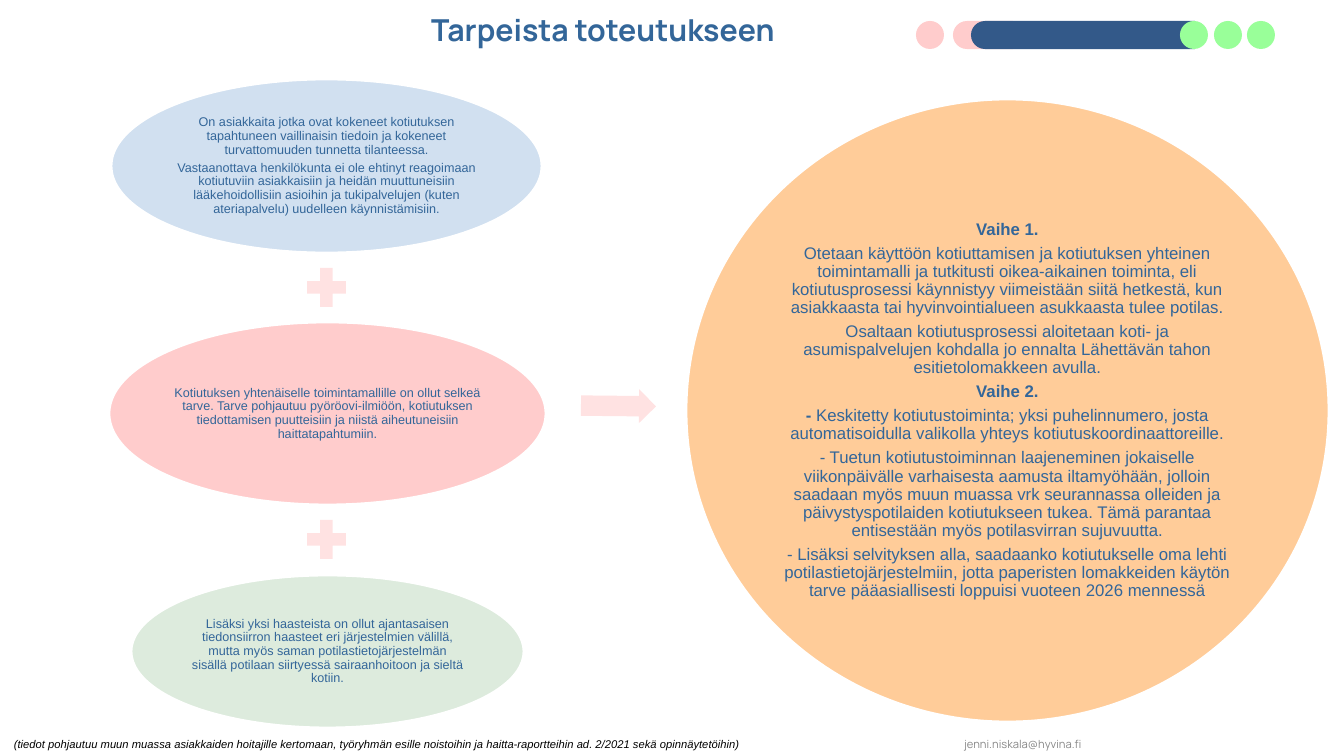
import pptx
import pptx.dml.color
import pptx.enum.shapes
import pptx.enum.text
import pptx.util

PX = 914400 / 100.8
COLORS = {
    "text": "336699", "navy": "335989", "mint": "99FF99", "rose": "FFCCCC",
    "blush": "FFE2E2", "sky": "D1E0F0", "sage": "DDEBDD", "peach": "FFCC99",
    "white": "FFFFFF", "grey": "888888", "black": "000000",
}
PRESET = pptx.enum.shapes.MSO_SHAPE
ALIGN = pptx.enum.text.PP_ALIGN
ANCHOR = pptx.enum.text.MSO_ANCHOR

presentation = pptx.Presentation()
presentation.slide_width = round(1344 * PX)
presentation.slide_height = round(756 * PX)
slide = presentation.slides.add_slide(presentation.slide_layouts[5])


def add_figure(preset, box, color):
    figure = slide.shapes.add_shape(preset, *(round(length * PX) for length in box))
    figure.shadow.inherit = False
    figure.fill.solid()
    figure.fill.fore_color.rgb = pptx.dml.color.RGBColor.from_string(COLORS[color])
    figure.line.fill.background()
    return figure


def write(frame, paragraphs, frame_format, paragraph_format, font_format, color):
    """Fill a text frame; each paragraph is a list of (text, bold) runs."""
    for name, value in frame_format.items():
        setattr(frame, name, value)
    for index, runs in enumerate(paragraphs):
        paragraph = frame.add_paragraph() if index else frame.paragraphs[0]
        for name, value in paragraph_format.items():
            setattr(paragraph, name, value)
        for text, bold in runs:
            run = paragraph.add_run()
            run.text = text
            for name, value in {**font_format, "bold": bold}.items():
                setattr(run.font, name, value)
            run.font.color.rgb = pptx.dml.color.RGBColor.from_string(COLORS[color])


# Title
title = slide.shapes.title
for name, length in {"left": 421, "top": 13, "width": 467, "height": 40}.items():
    setattr(title, name, round(length * PX))
write(
    title.text_frame, [[("Tarpeista toteutukseen", True)]],
    {"word_wrap": True, "vertical_anchor": ANCHOR.BOTTOM,
     "auto_size": pptx.enum.text.MSO_AUTO_SIZE.NONE},
    {"alignment": ALIGN.LEFT, "line_spacing": 0.9},
    {"name": "Manrope", "size": pptx.util.Pt(21.6)}, "text",
)

# Header ornament: bars rounded on the left, made by turning upright ones
DOT = 28
ORNAMENT_TOP = 21
for left, length, color in [(953, 60, "rose"), (971, 224, "navy")]:
    upright = (left + (length - DOT) / 2, ORNAMENT_TOP - (length - DOT) / 2, DOT, length)
    bar = add_figure(PRESET.ROUND_2_SAME_RECTANGLE, upright, color)
    bar.adjustments[0] = 0.5
    bar.rotation = 270
for left, color in [(1180, "mint"), (1214, "mint"), (1247, "mint"), (916, "rose")]:
    add_figure(PRESET.OVAL, (left, ORNAMENT_TOP, DOT, DOT), color)

# Needs on the left, stages of the solution on the right
bubbles = [
    ((111, 79, 431, 174), "sky", 9, 1, [
        [("On asiakkaita jotka ovat kokeneet kotiutuksen tapahtuneen vaillinaisin tiedoin "
          "ja kokeneet turvattomuuden tunnetta tilanteessa.", False)],
        [("Vastaanottava henkilökunta ei ole ehtinyt reagoimaan kotiutuviin asiakkaisiin "
          "ja heidän muuttuneisiin lääkehoidollisiin asioihin ja tukipalvelujen (kuten "
          "ateriapalvelu) uudelleen käynnistämisiin.", False)],
    ]),
    ((109, 322, 437, 183), "rose", 9, 1, [
        [("Kotiutuksen yhtenäiselle toimintamallille on ollut selkeä tarve. Tarve pohjautuu "
          "pyöröovi-ilmiöön, kotiutuksen tiedottamisen puutteisiin ja niistä "
          "aiheutuneisiin haittatapahtumiin.", False)],
    ]),
    ((131, 575, 393, 153), "sage", 9, 1, [
        [("Lisäksi yksi haasteista on ollut ajantasaisen tiedonsiirron haasteet eri "
          "järjestelmien välillä, mutta myös saman potilastietojärjestelmän sisällä "
          "potilaan siirtyessä sairaanhoitoon ja sieltä kotiin.", False)],
    ]),
    ((686, 99, 643, 623), "peach", 12, 2, [
        [("Vaihe 1.", True)],
        [("Otetaan käyttöön kotiuttamisen ja kotiutuksen yhteinen toimintamalli ja "
          "tutkitusti oikea-aikainen toiminta, eli kotiutusprosessi käynnistyy viimeistään "
          "siitä hetkestä, kun asiakkaasta tai hyvinvointialueen asukkaasta tulee "
          "potilas.", False)],
        [("Osaltaan kotiutusprosessi aloitetaan koti- ja asumispalvelujen kohdalla jo "
          "ennalta Lähettävän tahon esitietolomakkeen avulla.", False)],
        [("Vaihe 2.", True)],
        [("- ", True),
         ("Keskitetty kotiutustoiminta; yksi puhelinnumero, josta automatisoidulla "
          "valikolla yhteys kotiutuskoordinaattoreille.", False)],
        [("- Tuetun kotiutustoiminnan laajeneminen jokaiselle viikonpäivälle varhaisesta "
          "aamusta iltamyöhään, jolloin saadaan myös muun muassa vrk seurannassa olleiden "
          "ja päivystyspotilaiden kotiutukseen tukea. Tämä parantaa entisestään myös "
          "potilasvirran sujuvuutta.", False)],
        [("- Lisäksi selvityksen alla, saadaanko kotiutukselle oma lehti "
          "potilastietojärjestelmiin, jotta paperisten lomakkeiden käytön tarve "
          "pääasiallisesti loppuisi vuoteen 2026 mennessä", False)],
    ]),
]
for box, color, size, inset, paragraphs in bubbles:
    bubble = add_figure(PRESET.OVAL, box, color)
    bubble.line.color.rgb = pptx.dml.color.RGBColor.from_string(COLORS["white"])
    bubble.line.width = pptx.util.Pt(2)
    margins = {f"margin_{side}": round(inset * PX) for side in ("left", "top", "right", "bottom")}
    write(
        bubble.text_frame, paragraphs,
        {"word_wrap": True, "vertical_anchor": ANCHOR.MIDDLE, **margins},
        {"alignment": ALIGN.CENTER, "line_spacing": 0.9,
         "space_after": pptx.util.Pt(size * 0.35)},
        {"name": "Arial", "size": pptx.util.Pt(size)}, "text",
    )

for top in (261, 513):
    add_figure(PRESET.MATH_PLUS, (300, top, 53, 53), "blush")
arrow = add_figure(PRESET.RIGHT_ARROW, (581, 389, 75, 34), "blush")
arrow.adjustments[0] = 0.6
arrow.adjustments[1] = 0.5
arrow.rotation = 0.6

# Contact and source note
footers = [
    ((796, 733, 454, 22), "jenni.niskala@hyvina.fi", ANCHOR.MIDDLE, ALIGN.CENTER,
     "Manrope", False, "grey"),
    ((4, 732, 828, 24),
     "(tiedot pohjautuu muun muassa asiakkaiden hoitajille kertomaan, työryhmän esille "
     "noistoihin ja haitta-raportteihin ad. 2/2021 sekä opinnäytetöihin)",
     ANCHOR.TOP, ALIGN.LEFT, "Arial", True, "black"),
]
for box, text, anchor, alignment, font, italic, color in footers:
    footer = slide.shapes.add_textbox(*(round(length * PX) for length in box))
    write(
        footer.text_frame, [[(text, False)]],
        {"word_wrap": True, "vertical_anchor": anchor}, {"alignment": alignment},
        {"name": font, "size": pptx.util.Pt(8), "italic": italic}, color,
    )

presentation.save("out.pptx")
